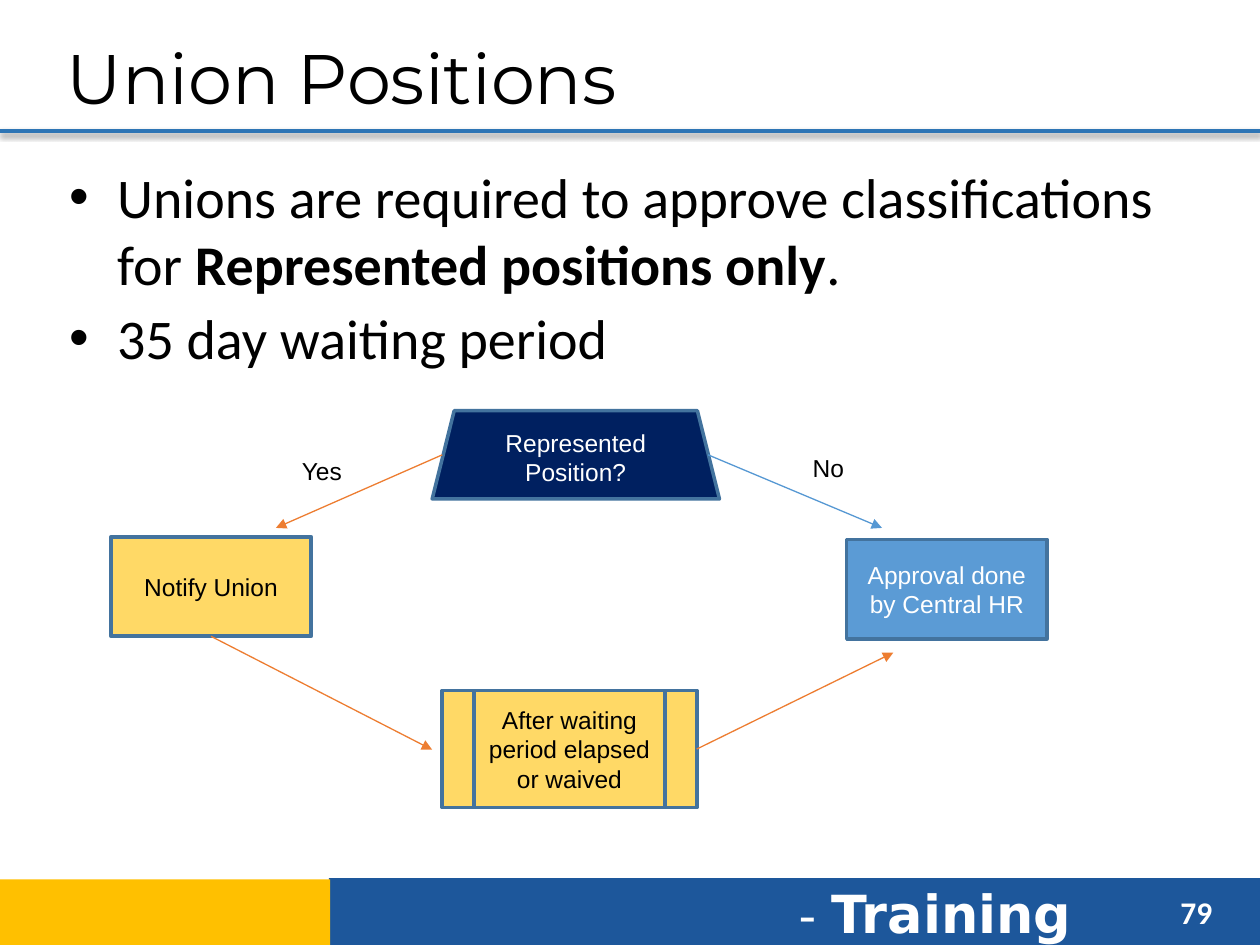
from dataclasses import dataclass
from typing import Optional

from lxml import etree
from pptx import Presentation
from pptx.dml.color import RGBColor
from pptx.enum import shapes, text
from pptx.oxml.ns import qn
from pptx.util import Inches, Pt

COLORS = {
    "black": "000000", "white": "FFFFFF", "navy": "002060", "outline": "43739E",
    "yellow": "FFD966", "sky": "5B9BD5", "orange": "ED7D31", "arrow_blue": "5698D3",
    "footer_blue": "1D579B", "footer_gold": "FFC000", "rule": "2E75B5",
}
SHAPE = shapes.MSO_SHAPE
ALIGN = text.PP_ALIGN


@dataclass
class Step:
    label: str
    kind: int
    box: tuple[float, float, float, float]
    fill: str
    ink: str


@dataclass
class Arrow:
    start: tuple[float, float]
    end: tuple[float, float]
    color: str
    source: Optional[str] = None
    site: int = 0


STEPS = [
    Step("Represented Position?", SHAPE.TRAPEZOID, (3.43, 3.26, 2.28, 0.7), "navy", "white"),
    Step("Notify Union", SHAPE.RECTANGLE, (0.88, 4.26, 1.59, 0.79), "yellow", "black"),
    Step("Approval done by Central HR", SHAPE.RECTANGLE, (6.72, 4.28, 1.59, 0.79), "sky", "white"),
    Step("After waiting period elapsed or waived", SHAPE.FLOWCHART_PREDEFINED_PROCESS,
         (3.51, 5.48, 2.02, 0.93), "yellow", "black"),
]
ARROWS = [
    Arrow((3.51, 3.61), (2.19, 4.19), "orange"),
    Arrow((5.62, 3.61), (7, 4.19), "arrow_blue"),
    Arrow((1.68, 5.05), (3.43, 5.95), "orange", "Notify Union", 2),
    Arrow((5.53, 5.95), (7.09, 5.18), "orange", "After waiting period elapsed or waived", 3),
]
BRANCH_LABELS = [("Yes", 2.13, 3.57), ("No", 6.15, 3.55)]
BULLETS = [
    [("Unions are required to approve classifications for ", False),
     ("Represented positions only", True), (".", False)],
    [("35 day waiting period", False)],
]


def rgb(name: str) -> RGBColor:
    return RGBColor.from_string(COLORS[name])


def inches(values) -> list:
    return [Inches(value) for value in values]


def style(font, name: str, size: float, color: str, bold: bool = False) -> None:
    font.name, font.size, font.bold = name, Pt(size), bold
    font.color.rgb = rgb(color)


def place(shape, box) -> None:
    shape.left, shape.top, shape.width, shape.height = inches(box)


def add_block(slide, kind, box, fill: str, outline: Optional[str] = None):
    shape = slide.shapes.add_shape(kind, *inches(box))
    shape.shadow.inherit = False
    shape.fill.solid()
    shape.fill.fore_color.rgb = rgb(fill)
    if outline:
        shape.line.color.rgb = rgb(outline)
        shape.line.width = Pt(2)
    else:
        shape.line.fill.background()
    return shape


def add_step(slide, step: Step):
    shape = add_block(slide, step.kind, step.box, step.fill, "outline")
    frame = shape.text_frame
    frame.word_wrap = True
    frame.vertical_anchor = text.MSO_ANCHOR.MIDDLE
    frame.text = step.label
    frame.paragraphs[0].alignment = ALIGN.CENTER
    style(frame.paragraphs[0].runs[0].font, "Arial", 14, step.ink)
    return shape


def add_text(slide, box, runs, align=ALIGN.LEFT) -> None:
    """Each run is (words, font name, size, colour, bold)."""
    frame = slide.shapes.add_textbox(*inches(box)).text_frame
    frame.word_wrap = True
    paragraph = frame.paragraphs[0]
    paragraph.alignment = align
    for words, *look in runs:
        run = paragraph.add_run()
        run.text = words
        style(run.font, *look)


def add_line(slide, start, end, color: str, width: float):
    """Return the connector and its empty effect list."""
    line = slide.shapes.add_connector(shapes.MSO_CONNECTOR.STRAIGHT, *inches(start + end))
    line.line.color.rgb = rgb(color)
    line.line.width = Pt(width)
    effects = etree.SubElement(line._element.spPr, qn("a:effectLst"))
    return line, effects


def add_arrow(slide, arrow: Arrow, steps: dict) -> None:
    line, _ = add_line(slide, arrow.start, arrow.end, arrow.color, 0.75)
    etree.SubElement(line.line._get_or_add_ln(), qn("a:tailEnd"), type="triangle")
    if arrow.source:
        line.begin_connect(steps[arrow.source], arrow.site)


def add_header_rule(slide) -> None:
    _, effects = add_line(slide, (0, 1.04), (10, 1.04), "rule", 2.25)
    shadow = etree.SubElement(effects, qn("a:outerShdw"), blurRad=str(Pt(3.1)),
                              dist=str(Pt(1.6)), dir="5400000", rotWithShape="0")
    color = etree.SubElement(shadow, qn("a:srgbClr"), val=COLORS["black"])
    etree.SubElement(color, qn("a:alpha"), val="38000")


def fill_title(title) -> None:
    place(title, (0.43, 0.14, 9.57, 0.93))
    frame = title.text_frame
    frame.text = "Union Positions"
    frame.auto_size = text.MSO_AUTO_SIZE.NONE
    frame.vertical_anchor = text.MSO_ANCHOR.MIDDLE
    frame.paragraphs[0].alignment = ALIGN.LEFT
    style(frame.paragraphs[0].runs[0].font, "Montserrat", 40, "black")


def fill_body(body) -> None:
    place(body, (0.33, 1.24, 9.5, 5.19))
    frame = body.text_frame
    frame.auto_size = text.MSO_AUTO_SIZE.NONE
    for index, runs in enumerate(BULLETS):
        paragraph = frame.add_paragraph() if index else frame.paragraphs[0]
        properties = paragraph._p.get_or_add_pPr()
        properties.set("marL", str(Inches(0.5)))
        properties.set("indent", str(Inches(-0.38)))
        paragraph.space_before = Pt(3.6 if index else 0)
        bullet_color = etree.SubElement(properties, qn("a:buClr"))
        etree.SubElement(bullet_color, qn("a:srgbClr"), val=COLORS["black"])
        etree.SubElement(properties, qn("a:buFont"), typeface="Arial")
        etree.SubElement(properties, qn("a:buChar"), char="•")
        for words, bold in runs:
            run = paragraph.add_run()
            run.text = words
            style(run.font, "Calibri", 32, "black", bold)


def main() -> None:
    presentation = Presentation()
    presentation.slide_width, presentation.slide_height = Inches(10), Inches(7.5)
    slide = presentation.slides.add_slide(presentation.slide_layouts[1])
    fill_title(slide.shapes.title)
    fill_body(slide.placeholders[1])

    add_block(slide, SHAPE.RECTANGLE, (2.61, 6.97, 7.39, 0.55), "footer_blue")
    add_text(slide, (6.24, 6.94, 2.8, 0.61), [("- ", "DejaVu Sans", 28, "white", False),
                                              ("Training", "DejaVu Sans", 30, "white", True)])
    add_header_rule(slide)
    add_text(slide, (9.27, 7.04, 0.6, 0.4), [("79", "Calibri", 18, "white", True)])
    add_block(slide, SHAPE.RECTANGLE, (-0.01, 6.98, 2.63, 0.55), "footer_gold")

    steps = {step.label: add_step(slide, step) for step in STEPS}
    for arrow in ARROWS:
        add_arrow(slide, arrow, steps)
    for label, left, top in BRANCH_LABELS:
        add_text(slide, (left, top, 0.85, 0.34), [(label, "Arial", 14, "black", False)],
                 ALIGN.CENTER)
    presentation.save("out.pptx")


if __name__ == "__main__":
    main()
